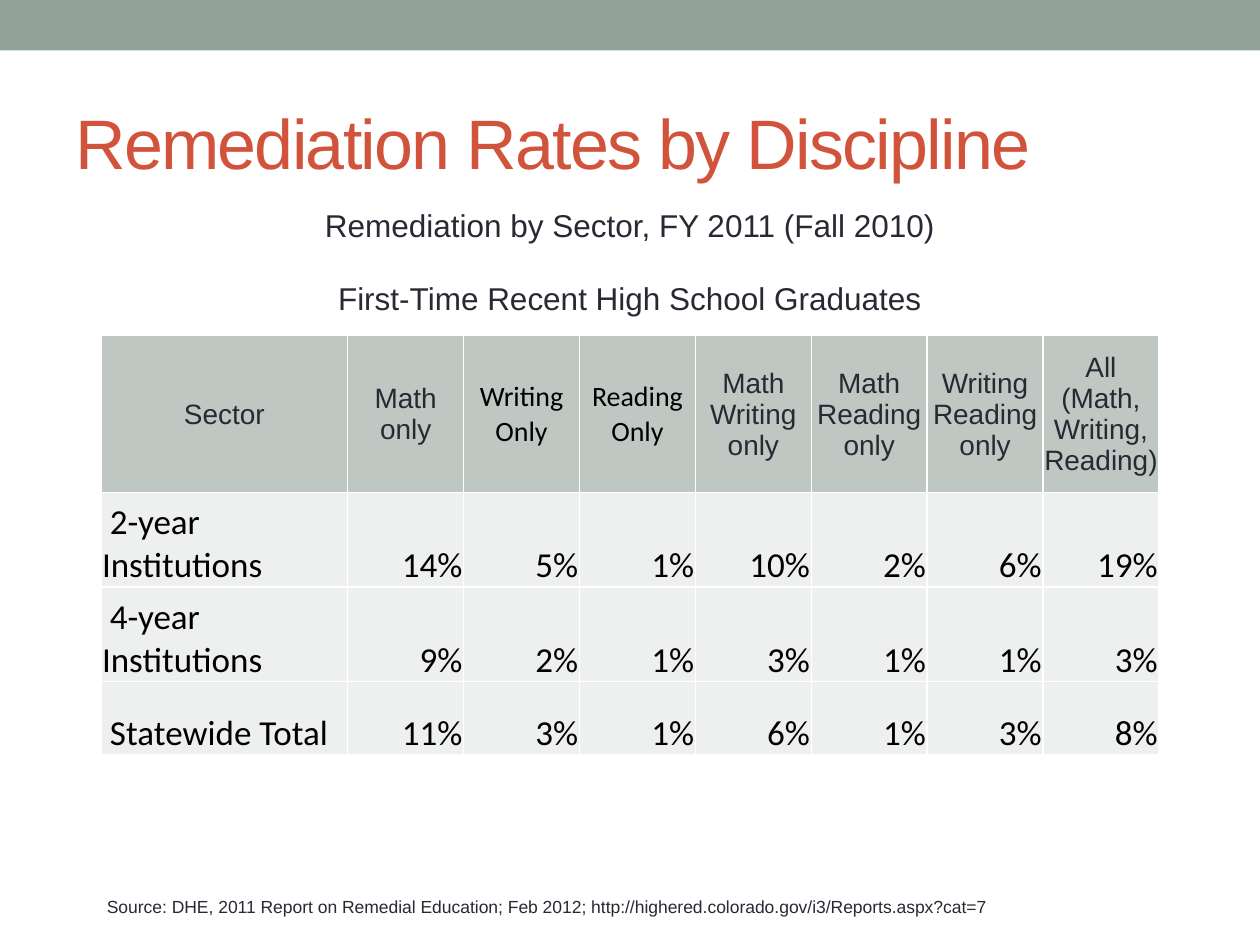
from pptx import Presentation
from pptx.dml.color import RGBColor
from pptx.enum.shapes import MSO_SHAPE
from pptx.enum.text import MSO_ANCHOR, PP_ALIGN
from pptx.util import Inches, Pt

TITLE = "Remediation Rates by Discipline"
HEADS = ["Remediation by Sector, FY 2011 (Fall 2010)",
         "First-Time Recent High School Graduates"]
COLS = ["Sector", "Math only", "Writing Only", "Reading Only",
        "Math Writing only", "Math Reading only", "Writing Reading only",
        "All (Math, Writing, Reading)"]
RATES = [
    (" 2-year Institutions", 14, 5, 1, 10, 2, 6, 19),
    (" 4-year Institutions", 9, 2, 1, 3, 1, 1, 3),
    (" Statewide Total", 11, 3, 1, 6, 1, 3, 8),
]
SOURCE = ("Source: DHE, 2011 Report on Remedial Education; Feb 2012; "
          "http://highered.colorado.gov/i3/Reports.aspx?cat=7")

HUES = {"band": "93A299", "title": "D2533C", "ink": "292934",
        "black": "000000", "white": "FFFFFF", "head": "BEC7C2",
        "body": "EEF0EF"}
WIDE, HIGH = 10, 7.5
WIDTHS = [1.96] + [0.92] * 7
HEIGHTS = [0.58, 0.58, 1.25, 0.75, 0.75, 0.58]
LEFT, TOP = (WIDE - sum(WIDTHS)) / 2, HIGH / 5
PAD = 0.01


def hue(name):
    return RGBColor.from_string(HUES[name])


def write(frame, text, size, ink="ink", face="Arial", align=PP_ALIGN.LEFT):
    line = frame.paragraphs[0]
    line.alignment = align
    run = line.add_run()
    run.text = text
    run.font.size = Pt(size)
    run.font.name = face
    run.font.color.rgb = hue(ink)
    return run


def add_text(slide, box, anchor, text, size, ink):
    frame = slide.shapes.add_textbox(*map(Inches, box)).text_frame
    frame.word_wrap = True
    frame.vertical_anchor = anchor
    return write(frame, text, size, ink)


def fill_cell(cell, back, anchor, *style):
    cell.fill.solid()
    cell.fill.fore_color.rgb = hue(back)
    cell.vertical_anchor = anchor
    cell.margin_left = cell.margin_right = cell.margin_top = Inches(PAD)
    cell.margin_bottom = 0
    write(cell.text_frame, *style)


def add_rates(slide):
    size = sum(WIDTHS), sum(HEIGHTS)
    table = slide.shapes.add_table(len(HEIGHTS), len(WIDTHS),
                                   *map(Inches, (LEFT, TOP, *size))).table
    table.first_row = table.horz_banding = False
    for col, width in zip(table.columns, WIDTHS):
        col.width = Inches(width)
    for row, height in zip(table.rows, HEIGHTS):
        row.height = Inches(height)

    mid, low = MSO_ANCHOR.MIDDLE, MSO_ANCHOR.BOTTOM
    for r, text in enumerate(HEADS):
        cell = table.cell(r, 0)
        cell.merge(table.cell(r, len(COLS) - 1))
        fill_cell(cell, "white", mid, text, 18, "ink", "Arial",
                  PP_ALIGN.CENTER)
    for c, text in enumerate(COLS):
        look = ("black", "Calibri") if text.endswith("Only") else ("ink", "Arial")
        fill_cell(table.cell(len(HEADS), c), "head", mid, text, 16, *look,
                  PP_ALIGN.CENTER)
    for r, (name, *rates) in enumerate(RATES, len(HEADS) + 1):
        for c, text in enumerate([name] + [f"{rate}%" for rate in rates]):
            fill_cell(table.cell(r, c), "body", low, text, 20, "black",
                      "Calibri", PP_ALIGN.RIGHT if c else PP_ALIGN.LEFT)


def main():
    deck = Presentation()
    deck.slide_width, deck.slide_height = Inches(WIDE), Inches(HIGH)
    slide = deck.slides.add_slide(deck.slide_layouts[6])

    band = slide.shapes.add_shape(MSO_SHAPE.RECTANGLE, 0, 0,
                                  Inches(WIDE), Inches(0.4))
    band.shadow.inherit = False
    band.fill.solid()
    band.fill.fore_color.rgb = hue("band")
    band.line.fill.background()

    add_rates(slide)
    add_text(slide, (0.75, 7.06, 8.74, 0.27), MSO_ANCHOR.TOP, SOURCE, 10, "ink")
    run = add_text(slide, (0.5, 0.58, 9, 1.08), MSO_ANCHOR.MIDDLE,
                   TITLE, 40, "title")
    run.font._element.set("spc", "-100")
    deck.save("out.pptx")


if __name__ == "__main__":
    main()
